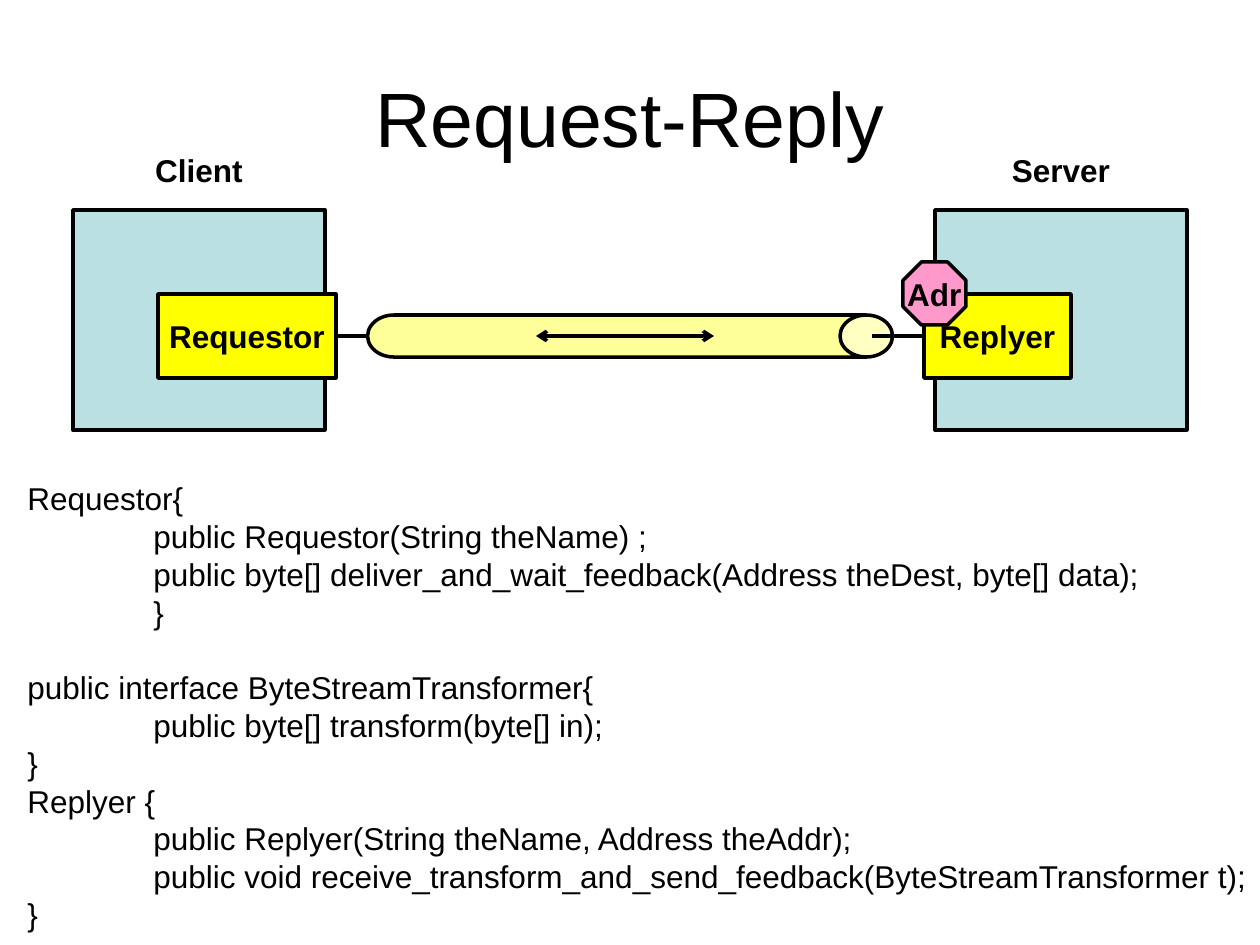
from pptx import Presentation
from pptx.dml.color import RGBColor
from pptx.enum.shapes import MSO_CONNECTOR, MSO_SHAPE
from pptx.enum.text import MSO_ANCHOR, PP_ALIGN
from pptx.oxml.ns import qn
from pptx.util import Emu, Pt
from lxml.etree import SubElement

PX_PER_INCH = 126
BLACK = RGBColor(0x00, 0x00, 0x00)
HOST_BLUE = RGBColor(0xBB, 0xE0, 0xE3)
CHANNEL_YELLOW = RGBColor(0xFF, 0xFF, 0x99)
PART_YELLOW = RGBColor(0xFF, 0xFF, 0x00)
ADDRESS_PINK = RGBColor(0xFF, 0x99, 0xCC)

FONT = "Arial"
LINE_PT = 21.6
INDENT = 126
AXIS_Y = 336

# Each block is a list of (indent level, text) lines.
CODE_BLOCKS = [
    [
        (0, "Requestor{"),
        (1, "public Requestor(String theName) ;"),
        (1, "public byte[] deliver_and_wait_feedback(Address theDest, byte[] data);"),
        (1, "}"),
    ],
    [
        (0, "public interface ByteStreamTransformer{"),
        (1, "public byte[] transform(byte[] in);"),
        (0, "}"),
        (0, "Replyer {"),
        (1, "public Replyer(String theName, Address theAddr);"),
        (1, "public void receive_transform_and_send_feedback(ByteStreamTransformer t);"),
        (0, "}"),
    ],
]


def px(length):
    return Emu(round(length * 914400 / PX_PER_INCH))


def write(para, text, size=18, bold=False, align=PP_ALIGN.CENTER):
    para.alignment = align
    span = para.add_run()
    span.text = text
    span.font.name = FONT
    span.font.size = Pt(size)
    span.font.bold = bold
    span.font.color.rgb = BLACK


def add_label(page, text, left, top, width, height, **style):
    box = page.shapes.add_textbox(px(left), px(top), px(width), px(height))
    box.text_frame.word_wrap = True
    box.text_frame.vertical_anchor = MSO_ANCHOR.MIDDLE
    write(box.text_frame.paragraphs[0], text, **style)


def add_block(page, kind, left, top, width, height, fill, text=""):
    """Add an outlined preset shape, with bold centred text if any is given."""
    shape = page.shapes.add_shape(kind, px(left), px(top), px(width), px(height))
    shape.shadow.inherit = False
    shape.fill.solid()
    shape.fill.fore_color.rgb = fill
    shape.line.color.rgb = BLACK
    shape.line.width = Pt(2)
    if text:
        frame = shape.text_frame
        frame.word_wrap = False
        frame.vertical_anchor = MSO_ANCHOR.MIDDLE
        write(frame.paragraphs[0], text, bold=True)
    return shape


def add_host(page, name, left):
    add_block(page, MSO_SHAPE.RECTANGLE, left, 210, 252, 220, HOST_BLUE)
    add_label(page, name, left, 150, 252, 40, bold=True)


def add_channel(page):
    """Add the can that lies on its side between the two hosts."""
    length, thickness = 525, 42
    can = add_block(page, MSO_SHAPE.CAN, 630 - thickness / 2, AXIS_Y - length / 2,
                    thickness, length, CHANNEL_YELLOW)
    can.adjustments[0] = 1.25
    can.rotation = 90


def add_link(page, start, end, arrows=False):
    """Add a line along the channel axis."""
    link = page.shapes.add_connector(
        MSO_CONNECTOR.STRAIGHT, px(start), px(AXIS_Y), px(end), px(AXIS_Y))
    link.line.color.rgb = BLACK
    link.line.width = Pt(2)
    properties = link._element.spPr
    if arrows:
        for end_tag in ("a:headEnd", "a:tailEnd"):
            SubElement(properties.find(qn("a:ln")), qn(end_tag), type="arrow")
    SubElement(properties, qn("a:effectLst"))


def add_code(page, left, top, width, height):
    box = page.shapes.add_textbox(px(left), px(top), px(width), px(height))
    frame = box.text_frame
    frame.word_wrap = False
    para = None
    for block in CODE_BLOCKS:
        for number, (level, text) in enumerate(block):
            first = para is None
            para = frame.paragraphs[0] if first else frame.add_paragraph()
            para.line_spacing = Pt(LINE_PT)
            if number == 0 and not first:
                para.space_before = Pt(LINE_PT)
            write(para, text, align=PP_ALIGN.LEFT)
            if level:
                para._p.get_or_add_pPr().set("marL", str(px(level * INDENT)))


def main():
    deck = Presentation()
    deck.slide_width, deck.slide_height = px(1260), px(945)
    page = deck.slides.add_slide(deck.slide_layouts[6])

    add_label(page, "Request-Reply", 63, 38, 1134, 158, size=44)
    add_host(page, "Client", 73)
    add_host(page, "Server", 935)
    add_channel(page)
    add_link(page, 536, 714, arrows=True)
    add_block(page, MSO_SHAPE.RECTANGLE, 158, 294, 178, 84, PART_YELLOW, "Requestor")
    add_block(page, MSO_SHAPE.RECTANGLE, 924, 294, 147, 84, PART_YELLOW, "Replyer")
    add_link(page, 336, 368)
    add_link(page, 872, 924)
    add_code(page, 15, 473, 1245, 470)
    add_block(page, MSO_SHAPE.OCTAGON, 903, 262, 63, 63, ADDRESS_PINK, "Adr")

    deck.save("out.pptx")


if __name__ == "__main__":
    main()
